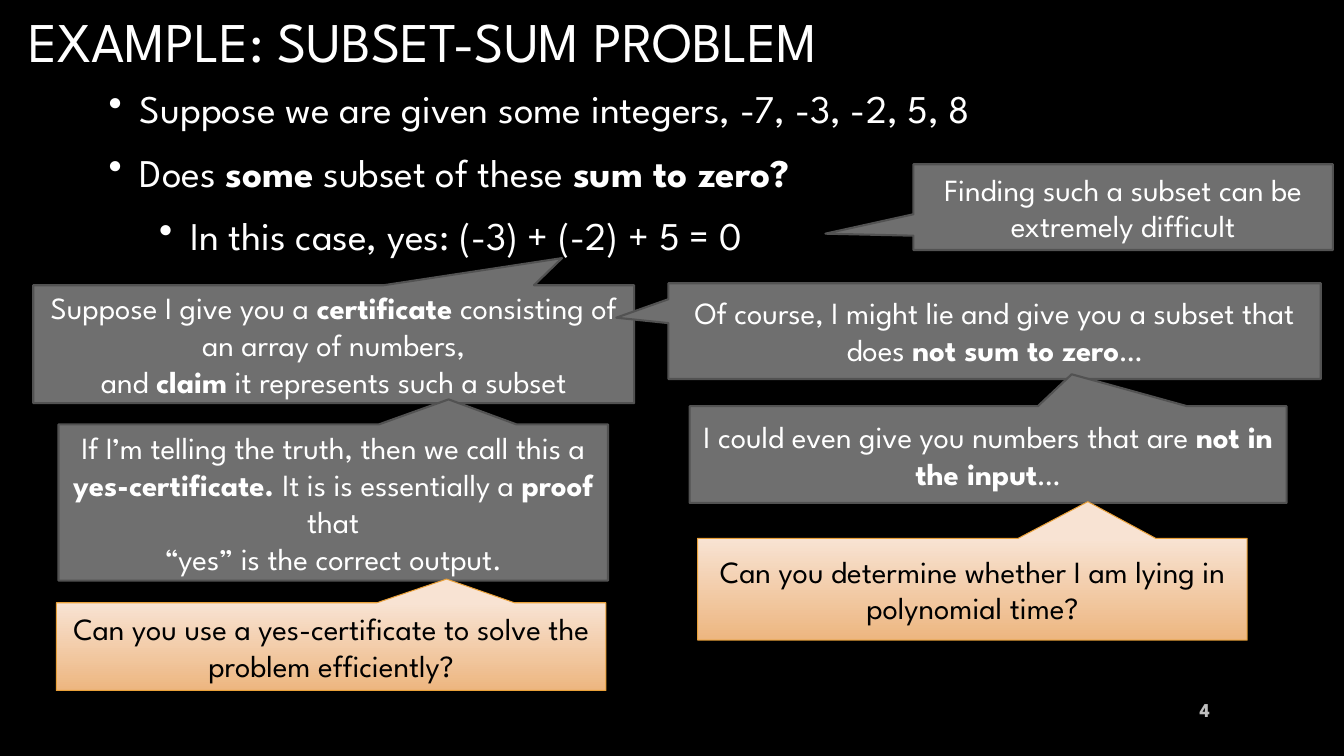
from lxml import etree
from pptx import Presentation
from pptx.dml.color import RGBColor
from pptx.enum.shapes import MSO_SHAPE
from pptx.enum.text import MSO_ANCHOR, PP_ALIGN
from pptx.oxml.ns import qn
from pptx.util import Inches, Pt

CALLOUT = MSO_SHAPE.RECTANGULAR_CALLOUT
MIDDLE, TOP = MSO_ANCHOR.MIDDLE, MSO_ANCHOR.TOP
LEFT, CENTER, RIGHT = PP_ALIGN.LEFT, PP_ALIGN.CENTER, PP_ALIGN.RIGHT
TITLE_ONLY = 5


def color(value):
    return RGBColor.from_string(value)


class SlideBuilder:
    font = "League Spartan"
    white, black, pale_gray = "FFFFFF", "000000", "BFBFBF"
    gray, gray_edge = "6F6F6F", "525252"
    peach, orange, orange_edge = "F8E3D3", "EDB680", "E9A039"

    def __init__(self, deck):
        self.page = deck.slides.add_slide(deck.slide_layouts[TITLE_ONLY])
        background = self.page.background.fill
        background.solid()
        background.fore_color.rgb = color(self.black)

    def fill_paragraph(self, para, text, size, ink, align=LEFT, bold=None):
        """Fill a paragraph; **marks** set bold and a newline breaks the line."""
        para.alignment = align
        para.font.name, para.font.size = self.font, Pt(size)
        para.font.color.rgb = color(ink)
        para.font.bold = bold
        for index, part in enumerate(text.split("**")):
            for line_number, line in enumerate(part.split("\n")):
                if line_number:
                    para.add_line_break()
                if line:
                    span = para.add_run()
                    span.text = line
                    if index % 2:
                        span.font.bold = True

    def text_box(self, place, anchor):
        box = self.page.shapes.add_textbox(*map(Inches, place))
        box.text_frame.word_wrap = True
        box.text_frame.vertical_anchor = anchor
        return box.text_frame

    def title(self, place, text):
        box = self.page.shapes.title
        box.left, box.top, box.width, box.height = map(Inches, place)
        box.text_frame.vertical_anchor = MIDDLE
        self.fill_paragraph(box.text_frame.paragraphs[0], text, 40, self.white)

    def bullets(self, place, items):
        frame = self.text_box(place, TOP)
        for index, (level, text) in enumerate(items):
            para = frame.paragraphs[0] if index == 0 else frame.add_paragraph()
            para.level = level
            para.space_after = Pt(6)
            if index:
                para.space_before = Pt(5.6)
            properties = para._p.get_or_add_pPr()
            properties.set("marL", str(Inches(0.31 + 0.5 * level)))
            properties.set("indent", str(Inches(-0.31)))
            etree.SubElement(properties, qn("a:buChar"), char="•")
            self.fill_paragraph(para, text, 28, self.white)

    def callout(self, place, tip, text, question=False):
        box = self.page.shapes.add_shape(CALLOUT, *map(Inches, place))
        box.shadow.inherit = False
        box.adjustments[0], box.adjustments[1] = tip
        if question:
            box.fill.gradient()
            box.fill.gradient_angle = 270
            for stop, shade in zip(box.fill.gradient_stops, (self.peach, self.orange)):
                stop.color.rgb = color(shade)
            edge, weight, ink = self.orange_edge, 0.75, self.black
        else:
            box.fill.solid()
            box.fill.fore_color.rgb = color(self.gray)
            edge, weight, ink = self.gray_edge, 1.5, self.white
        box.line.color.rgb = color(edge)
        box.line.width = Pt(weight)
        frame = box.text_frame
        frame.word_wrap = True
        frame.vertical_anchor = MIDDLE
        self.fill_paragraph(frame.paragraphs[0], text, 22, ink, CENTER)

    def page_number(self, place, text):
        frame = self.text_box(place, MIDDLE)
        self.fill_paragraph(frame.paragraphs[0], text, 14, self.pale_gray, RIGHT, bold=True)


def main():
    deck = Presentation()
    deck.slide_width, deck.slide_height = Inches(13.33), Inches(7.5)
    slide = SlideBuilder(deck)

    # Title and problem statement
    slide.title((0.18, 0, 13.04, 0.79), "EXAMPLE: SUBSET-SUM PROBLEM")
    slide.bullets((0.98, 0.79, 10.83, 2.3), [
        (0, "Suppose we are given some integers, -7, -3, -2, 5, 8"),
        (0, "Does **some** subset of these **sum to zero?**"),
        (1, "In this case, yes: (-3) + (-2) + 5 = 0"),
    ])

    # Remarks on certificates
    slide.callout((0.33, 2.83, 5.96, 1.17), (0.38, -0.73),
                  "Suppose I give you a **certificate** consisting of an array of numbers,\n"
                  "and **claim** it represents such a subset")
    slide.callout((6.63, 2.81, 6.47, 0.95), (-0.58, -0.14),
                  "Of course, I might lie and give you a subset that does **not sum to zero**…")
    slide.callout((0.58, 4.21, 5.45, 1.55), (0.21, -0.66),
                  "If I’m telling the truth, then we call this a **yes-certificate. **"
                  "It is is essentially a **proof **that\n“yes” is the correct output.")
    slide.callout((6.84, 4.03, 5.92, 0.96), (0.14, -0.83),
                  "I could even give you numbers that are **not in the input**…")
    slide.callout((9.06, 1.63, 4.16, 0.85), (-0.71, 0.31),
                  "Finding such a subset can be extremely difficult")

    # Questions to the audience
    slide.callout((0.56, 5.98, 5.45, 0.87), (0.21, -0.77),
                  "Can you use a yes-certificate to solve the problem efficiently?", question=True)
    slide.callout((6.92, 5.34, 5.45, 1.01), (0.21, -0.86),
                  "Can you determine whether I am lying in polynomial time?", question=True)

    # Footer
    slide.page_number((11.5, 6.84, 0.6, 0.4), "4")
    deck.save("out.pptx")


if __name__ == "__main__":
    main()
